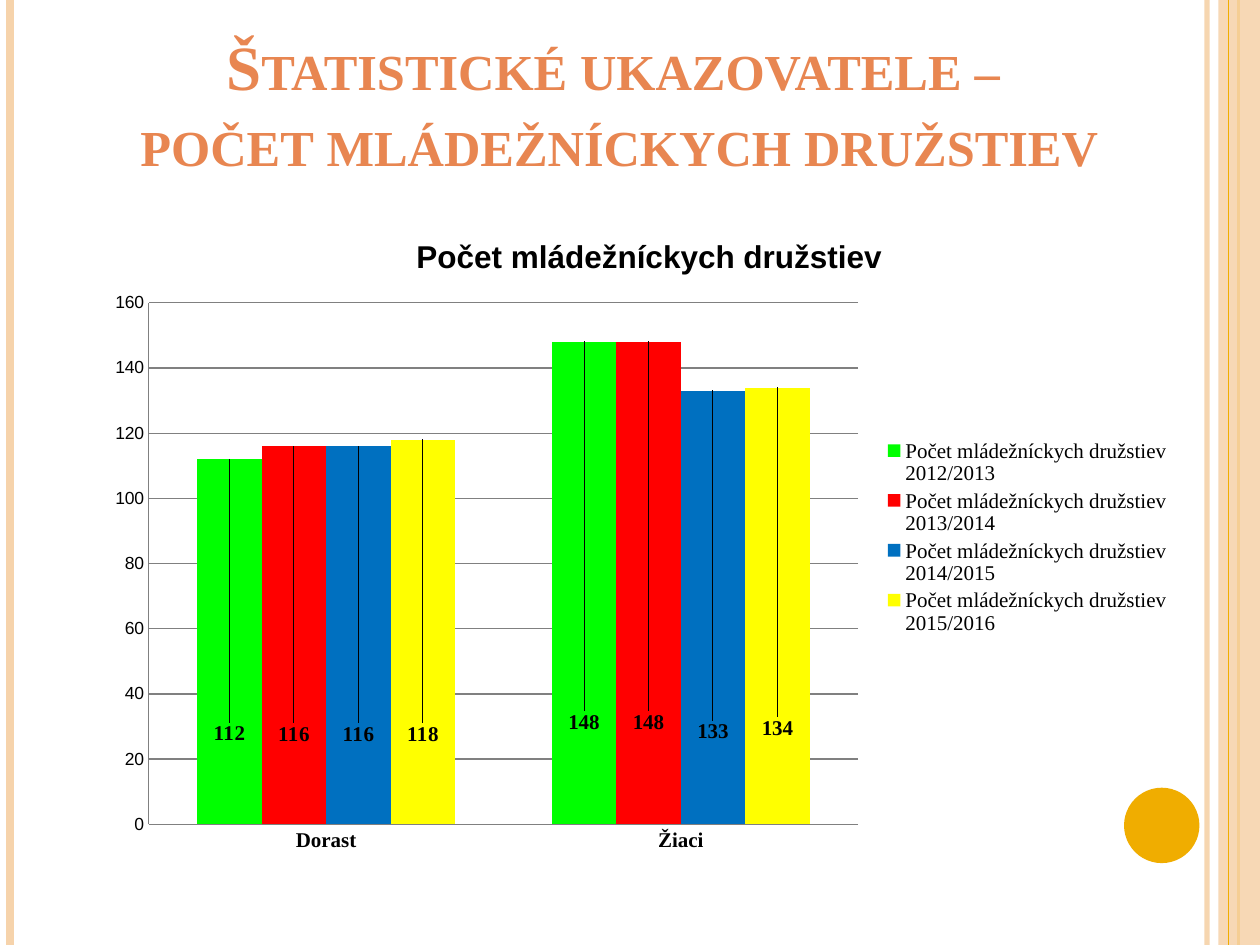
from dataclasses import dataclass
from typing import Optional

from lxml import etree
from pptx import Presentation
from pptx import util as u
from pptx.chart.data import CategoryChartData
from pptx.dml.color import RGBColor
from pptx.enum import chart as ch, shapes, text
from pptx.oxml import parse_xml
from pptx.oxml.ns import nsdecls, qn


@dataclass(frozen=True)
class Theme:
    peach: str = "F6D3AB"
    gold: str = "F0AD00"
    heading: str = "E88651"
    ink: str = "000000"
    grid: str = "808080"
    serif: str = "Times New Roman"
    sans: str = "Arial"
    heading_size: float = 36
    chart_title_size: float = 18
    label_size: float = 12
    tick_size: float = 10


@dataclass(frozen=True)
class Stripe:
    x: float
    width: float
    color: str
    alpha: Optional[int] = None


@dataclass(frozen=True)
class Season:
    years: str
    values: tuple
    color: str
    label_levels: tuple  # label heights on the value axis


THEME = Theme()
WIDTH, HEIGHT = 25.4, 19.05
CAPTION = "Počet mládežníckych družstiev"
AXIS_MAX = 160
PLOT = dict(x=0.05, y=0.15, w=0.65, h=0.79)

STRIPES = [
    Stripe(24.33, 3, THEME.peach, 93),
    Stripe(0.2, 4.5, THEME.peach),
    Stripe(24.97, 1.5, THEME.gold),
]
INNER_STRIPE = Stripe(24.77, 0.75, THEME.gold)

SEASONS = [
    Season("2012/2013", (112, 148), "00FF00", (27, 31)),
    Season("2013/2014", (116, 148), "FF0000", (27, 30.5)),
    Season("2014/2015", (116, 133), "0070C0", (27, 27)),
    Season("2015/2016", (118, 134), "FFFF00", (27, 29)),
]


def apply(obj, values: dict) -> None:
    for name, value in values.items():
        setattr(obj, name, value)


def style_font(font, name: str, size: float, bold: bool = False, color: str = THEME.ink) -> None:
    apply(font, dict(name=name, size=u.Pt(size), bold=bold))
    font.color.rgb = RGBColor.from_string(color)


def style_line(line, color: str, width: float) -> None:
    line.color.rgb = RGBColor.from_string(color)
    line.width = u.Pt(width)


def set_alpha(sp, percent: int) -> None:
    clr = sp._element.spPr.find(".//" + qn("a:srgbClr"))
    etree.SubElement(clr, qn("a:alpha"), val=str(percent * 1000))


def draw_stripe(s, stripe: Stripe) -> None:
    x = u.Cm(stripe.x)
    sp = s.shapes.add_connector(shapes.MSO_CONNECTOR.STRAIGHT, x, 0, x, u.Cm(HEIGHT))
    style_line(sp.line, stripe.color, stripe.width)
    if stripe.alpha:
        set_alpha(sp, stripe.alpha)
    etree.SubElement(sp._element.spPr, qn("a:effectLst"))


def draw_shape(s, kind, box: tuple, color: str):
    sp = s.shapes.add_shape(kind, *map(u.Cm, box))
    sp.shadow.inherit = False
    sp.fill.solid()
    sp.fill.fore_color.rgb = RGBColor.from_string(color)
    sp.line.fill.background()
    return sp


def draw_heading(s, lines: list) -> None:
    tf = s.shapes.add_textbox(*map(u.Cm, (2.11, 0.53, 20.75, 3.2))).text_frame
    apply(tf, dict(word_wrap=True, vertical_anchor=text.MSO_ANCHOR.BOTTOM))
    p = tf.paragraphs[0]
    p.alignment = text.PP_ALIGN.CENTER
    for i, line in enumerate(lines):
        if i:
            p.add_line_break()
        r = p.add_run()
        r.text = line
        style_font(r.font, THEME.serif, THEME.heading_size, True, THEME.heading)
        r.font._element.set("cap", "small")


def manual_layout(inner: bool = False, edge: bool = True, **fractions: float):
    parts = '<c:layoutTarget val="inner"/>' if inner else ""
    if edge:
        parts += '<c:xMode val="edge"/><c:yMode val="edge"/>'
    parts += "".join(f'<c:{k} val="{v:.2f}"/>' for k, v in fractions.items())
    return parse_xml(f'<c:layout {nsdecls("c")}><c:manualLayout>{parts}'
                     "</c:manualLayout></c:layout>")


def place(element, after: str, layout) -> None:
    for old in element.findall(qn("c:layout")):
        element.remove(old)
    element.find(qn(after)).addnext(layout)


def style_series(series, season: Season) -> None:
    series.format.fill.solid()
    series.format.fill.fore_color.rgb = RGBColor.from_string(season.color)
    series.invert_if_negative = False
    labels = series.data_labels
    apply(labels, dict(show_value=True, position=ch.XL_LABEL_POSITION.OUTSIDE_END))
    style_font(labels.font, THEME.serif, THEME.label_size, True)
    for i, (value, level) in enumerate(zip(season.values, season.label_levels)):
        label = series.points[i].data_label
        style_font(label.font, THEME.serif, THEME.label_size, True)
        label.position = ch.XL_LABEL_POSITION.OUTSIDE_END
        # Drop from just above the column to the wanted level
        drop = (value + 4 - level) / AXIS_MAX * PLOT["h"]
        dlbl = labels._element.findall(qn("c:dLbl"))[i]
        place(dlbl, "c:idx", manual_layout(edge=False, x=0, y=drop))


def draw_chart(s) -> None:
    data = CategoryChartData()
    data.categories = ["Dorast", "Žiaci"]
    for season in SEASONS:
        data.add_series(f"{CAPTION} {season.years}", season.values)
    chart = s.shapes.add_chart(ch.XL_CHART_TYPE.COLUMN_CLUSTERED,
                               *map(u.Cm, (1.9, 4.11, 22, 13.31)), data).chart
    style_font(chart.font, THEME.sans, THEME.tick_size)

    # Title
    chart.has_title = True
    p = chart.chart_title.text_frame.paragraphs[0]
    r = p.add_run()
    r.text = CAPTION
    style_font(r.font, THEME.sans, THEME.chart_title_size, True)
    place(chart.chart_title._element, "c:tx", manual_layout(x=0.29, y=0.04))

    # Legend
    chart.has_legend = True
    apply(chart.legend, dict(position=ch.XL_LEGEND_POSITION.RIGHT, include_in_layout=False))
    style_font(chart.legend.font, THEME.serif, THEME.label_size)
    place(chart.legend._element, "c:legendPos", manual_layout(x=0.72, y=0.35, w=0.27, h=0.31))

    # Axes
    cat, val = chart.category_axis, chart.value_axis
    apply(val, dict(minimum_scale=0, maximum_scale=AXIS_MAX, major_unit=20,
                    has_major_gridlines=True))
    for axis in (cat, val):
        axis.major_tick_mark = ch.XL_TICK_MARK.NONE
        style_line(axis.format.line, THEME.grid, 0.75)
    style_line(val.major_gridlines.format.line, THEME.grid, 0.75)
    style_font(cat.tick_labels.font, THEME.serif, THEME.label_size, True)
    style_font(val.tick_labels.font, THEME.sans, THEME.tick_size)

    # Columns
    plot = chart.plots[0]
    apply(plot, dict(gap_width=150, overlap=0, vary_by_categories=False))
    area = plot._element.getparent()
    for old in area.findall(qn("c:layout")):
        area.remove(old)
    area.insert(0, manual_layout(inner=True, **PLOT))
    for series, season in zip(plot.series, SEASONS):
        style_series(series, season)


def main() -> None:
    prs = Presentation()
    apply(prs, dict(slide_width=u.Cm(WIDTH), slide_height=u.Cm(HEIGHT)))
    s = prs.slides.add_slide(prs.slide_layouts[6])

    # Side decoration
    for stripe in STRIPES:
        draw_stripe(s, stripe)
    band = draw_shape(s, shapes.MSO_SHAPE.RECTANGLE, (24.56, 0, 0.84, HEIGHT), THEME.peach)
    set_alpha(band, 87)
    draw_stripe(s, INNER_STRIPE)
    draw_shape(s, shapes.MSO_SHAPE.OVAL, (22.66, 15.88, 1.52, 1.52), THEME.gold)

    # Content
    draw_heading(s, ["Štatistické ukazovatele – ", "počet mládežníckych družstiev"])
    draw_chart(s)
    prs.save("out.pptx")


if __name__ == "__main__":
    main()
